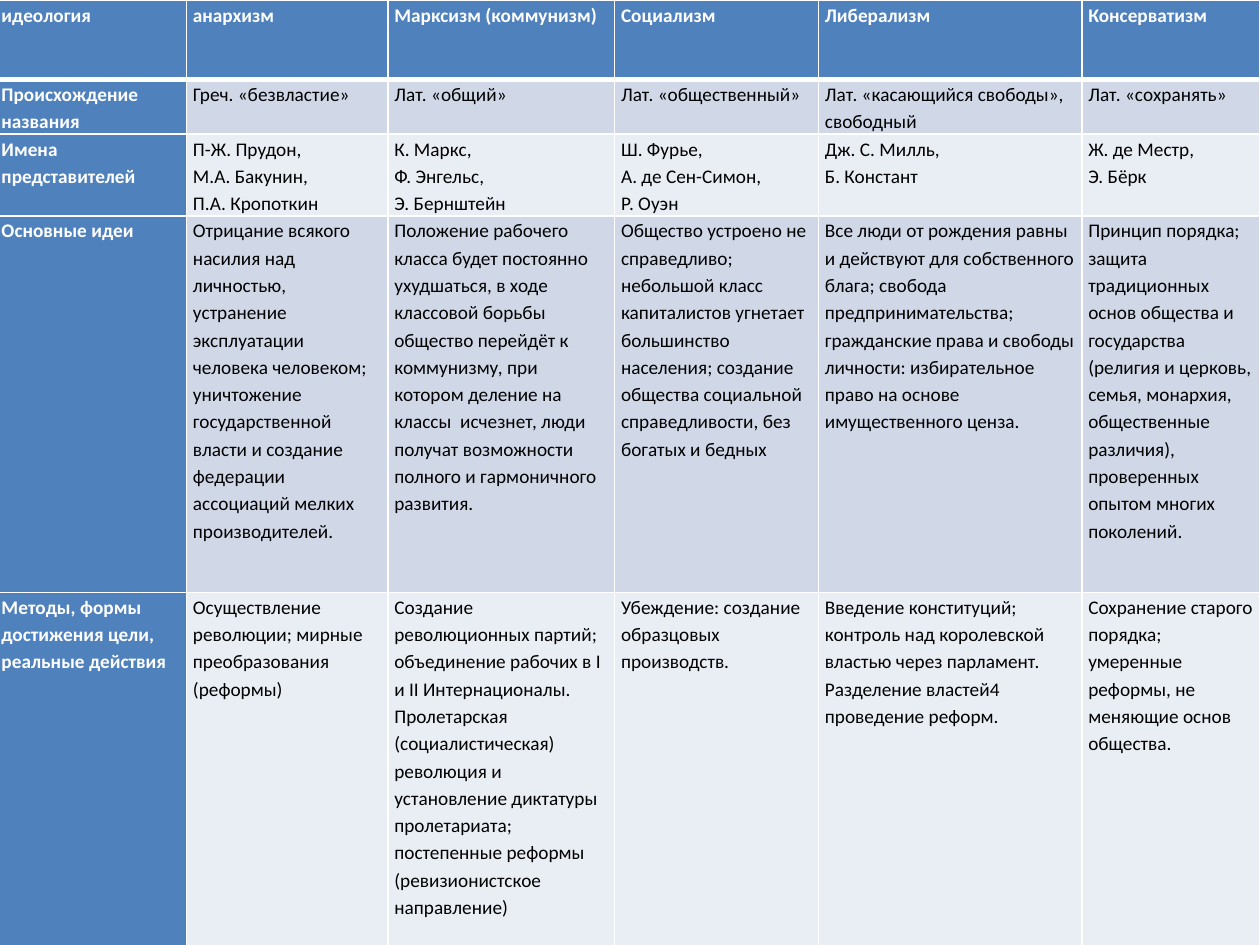
from dataclasses import dataclass

import lxml.etree
import pptx
import pptx.dml.color
import pptx.oxml.ns
import pptx.table
import pptx.util
from pptx.util import Cm

WHITE, BLACK = "FFFFFF", "000000"
HEADER_BLUE, DARK_BAND, LIGHT_BAND = "4F81BD", "D0D8E8", "E9EDF4"
COLUMN_WIDTHS = [3.86, 4.06, 4.57, 4.11, 5.31, 3.58]


@dataclass
class IdeologyRow:
    height: float
    texts: list[str]


ROWS = [
    IdeologyRow(1.6, [
        "идеология", "анархизм", "Марксизм (коммунизм)",
        "Социализм", "Либерализм", "Консерватизм",
    ]),
    IdeologyRow(1.07, [
        "Происхождение названия",
        "Греч. «безвластие»",
        "Лат. «общий»",
        "Лат. «общественный»",
        "Лат. «касающийся свободы», свободный",
        "Лат. «сохранять»",
    ]),
    IdeologyRow(1.63, [
        "Имена представителей",
        "П-Ж. Прудон,\nМ.А. Бакунин,\nП.А. Кропоткин",
        "К. Маркс,\nФ. Энгельс,\nЭ. Бернштейн",
        "Ш. Фурье,\nА. де Сен-Симон,\nР. Оуэн",
        "Дж. С. Милль,\nБ. Констант",
        "Ж. де Местр,\nЭ. Бёрк",
    ]),
    IdeologyRow(7.59, [
        "Основные идеи",
        "Отрицание всякого насилия над личностью, устранение эксплуатации "
        "человека человеком; уничтожение государственной власти и создание "
        "федерации ассоциаций мелких производителей.",
        "Положение рабочего класса будет постоянно ухудшаться, в ходе "
        "классовой борьбы общество перейдёт к коммунизму, при котором "
        "деление на классы  исчезнет, люди получат возможности полного и "
        "гармоничного развития.",
        "Общество устроено не справедливо; небольшой класс капиталистов "
        "угнетает большинство населения; создание общества социальной "
        "справедливости, без богатых и бедных",
        "Все люди от рождения равны и действуют для собственного блага; "
        "свобода предпринимательства; гражданские права и свободы личности: "
        "избирательное право на основе имущественного ценза.",
        "Принцип порядка; защита традиционных основ общества и государства "
        "(религия и церковь, семья, монархия, общественные различия), "
        "проверенных опытом многих поколений.",
    ]),
    IdeologyRow(7.16, [
        "Методы, формы достижения цели, реальные действия",
        "Осуществление революции; мирные преобразования (реформы)",
        "Создание революционных партий; объединение рабочих в I и II "
        "Интернационалы. Пролетарская (социалистическая) революция и "
        "установление диктатуры пролетариата; постепенные реформы "
        "(ревизионистское направление)",
        "Убеждение: создание образцовых производств.",
        "Введение конституций; контроль над королевской властью через "
        "парламент. Разделение властей4 проведение реформ.",
        "Сохранение старого порядка; умеренные реформы, не меняющие основ "
        "общества.",
    ]),
]


def color(value: str) -> pptx.dml.color.RGBColor:
    return pptx.dml.color.RGBColor.from_string(value)


def set_border(cell: pptx.table._Cell, side: str, points: float) -> None:
    properties = cell._tc.get_or_add_tcPr()
    qn = pptx.oxml.ns.qn
    line = lxml.etree.SubElement(properties, qn(f"a:ln{side}"), w=str(int(pptx.util.Pt(points))))
    fill = lxml.etree.SubElement(line, qn("a:solidFill"))
    lxml.etree.SubElement(fill, qn("a:srgbClr"), val=WHITE)


def fill_cell(cell: pptx.table._Cell, text: str, row: int, column: int) -> None:
    heading = row == 0 or column == 0
    band = DARK_BAND if row % 2 else LIGHT_BAND

    # Borders come before the fill; the rule under the header row is thicker
    for side in "LRTB":
        under_header = (row, side) in [(0, "B"), (1, "T")]
        set_border(cell, side, 3 if under_header else 1)
    cell.fill.solid()
    cell.fill.fore_color.rgb = color(HEADER_BLUE if heading else band)

    cell.margin_left = cell.margin_right = Cm(0.13)
    cell.margin_top = cell.margin_bottom = 0
    cell.text_frame.text = text
    for para in cell.text_frame.paragraphs:
        para.line_spacing = 1.15
        for span in para.runs:
            span.font.name = "Calibri"
            span.font.size = pptx.util.Pt(11)
            span.font.bold = heading
            span.font.color.rgb = color(WHITE if heading else BLACK)


def main() -> None:
    deck = pptx.Presentation()
    deck.slide_width, deck.slide_height = Cm(25.4), Cm(19.05)
    page = deck.slides.add_slide(deck.slide_layouts[6])

    # Table of ideologies, filling the page
    table = page.shapes.add_table(
        len(ROWS), len(COLUMN_WIDTHS), Cm(-0.1), 0,
        Cm(sum(COLUMN_WIDTHS)), Cm(sum(row.height for row in ROWS)),
    ).table
    for column, width in zip(table.columns, COLUMN_WIDTHS):
        column.width = Cm(width)
    for row_index, row in enumerate(ROWS):
        table.rows[row_index].height = Cm(row.height)
        for column_index, text in enumerate(row.texts):
            fill_cell(table.cell(row_index, column_index), text, row_index, column_index)

    deck.save("out.pptx")


if __name__ == "__main__":
    main()
